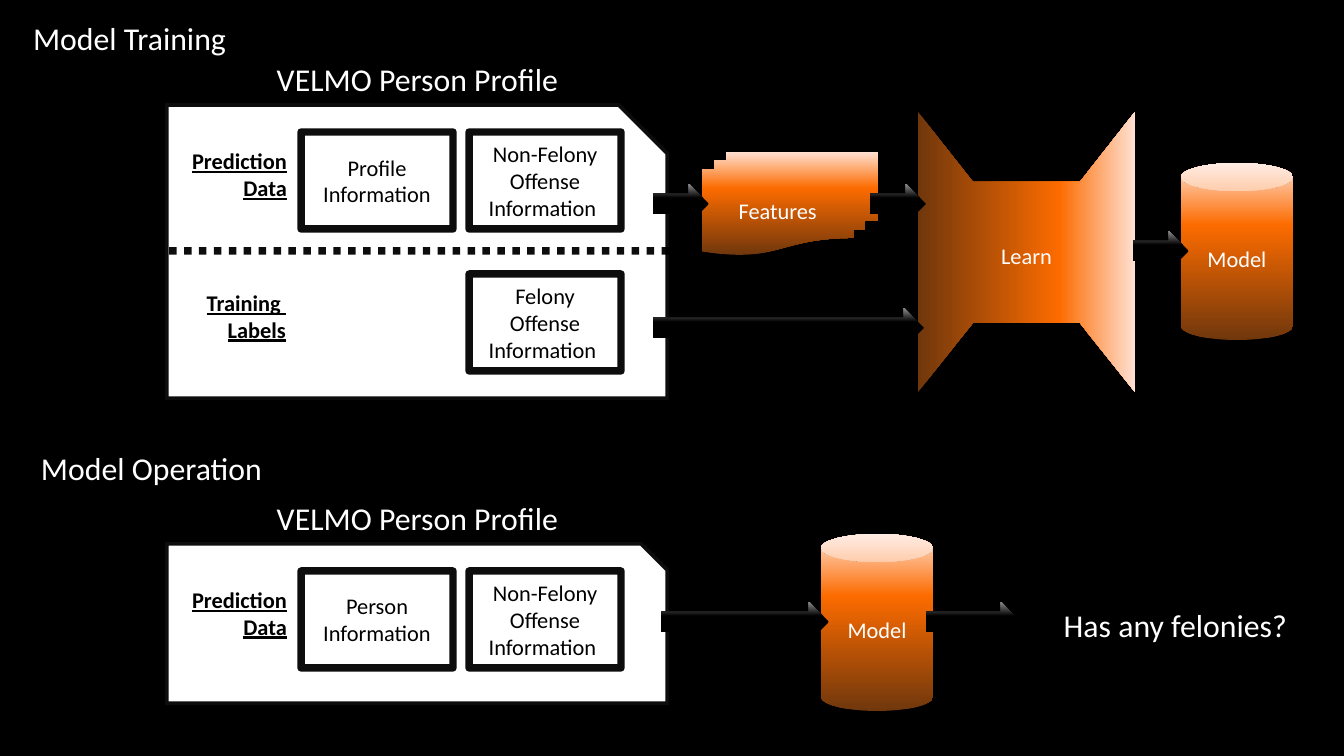
"""Build the slide on training and running the felony model."""
from copy import deepcopy
from lxml import etree
from pptx import Presentation
from pptx.dml.color import RGBColor
from pptx.enum.dml import MSO_LINE
from pptx.enum.shapes import MSO_CONNECTOR, MSO_SHAPE
from pptx.enum.text import MSO_ANCHOR, MSO_AUTO_SIZE, PP_ALIGN
from pptx.oxml.ns import qn
from pptx.util import Pt

PX = 914400 / 134.4
CARD, RECT = MSO_SHAPE.SNIP_1_RECTANGLE, MSO_SHAPE.RECTANGLE
CAN, ARROW = MSO_SHAPE.CAN, MSO_SHAPE.RIGHT_ARROW
PAGES = MSO_SHAPE.FLOWCHART_MULTIDOCUMENT
LEFT, MID, RIGHT = PP_ALIGN.LEFT, PP_ALIGN.CENTER, PP_ALIGN.RIGHT
COLORS = {"black": "000000", "white": "FFFFFF", "gray": "8D8D8D",
          "brown": "70370C", "orange": "FC6B00", "peach": "FFE0D2"}
HEX = {name: RGBColor.from_string(code) for name, code in COLORS.items()}
WARM = ["brown", "orange", "peach"]
DARK = ["black", "black", "gray"]

deck = Presentation()
deck.slide_width, deck.slide_height = round(1344 * PX), round(756 * PX)
slide = deck.slides.add_slide(deck.slide_layouts[6])
slide.background.fill.solid()
slide.background.fill.fore_color.rgb = HEX["black"]
shapes = slide.shapes
edges = []


def write(text, box=None, host=None, size=12, color="white", align=MID,
          bold=None, pad=(13, 7)):
    item = host or shapes.add_textbox(*[round(n * PX) for n in box])
    frame = item.text_frame
    frame.text = text
    if host:
        frame.word_wrap = True
        frame.vertical_anchor = MSO_ANCHOR.MIDDLE
    else:
        frame.word_wrap = False
        frame.auto_size = MSO_AUTO_SIZE.SHAPE_TO_FIT_TEXT
        frame.margin_left = frame.margin_right = round(pad[0] * PX)
        frame.margin_top = frame.margin_bottom = round(pad[1] * PX)
    for para in frame.paragraphs:
        para.alignment = align
        font = para.runs[0].font
        font.name, font.size = "Calibri", Pt(size)
        font.bold = font.underline = bold
        font.color.rgb = HEX[color]


def draw(kind, box, tones=None, angle=90, form=None):
    item = form or shapes.add_shape(kind, *[round(n * PX) for n in box])
    item.shadow.inherit = False
    if not tones:
        item.fill.solid()
        item.fill.fore_color.rgb = HEX["white"]
        edges.append(item)
        return item
    item.line.fill.background()
    item.fill.gradient()
    item.fill.gradient_angle = angle
    stops = item.element.spPr.find(".//" + qn("a:gsLst"))
    stops.insert(1, deepcopy(stops[0]))
    for stop, tone, place in zip(item.fill.gradient_stops, tones, (0, 0.65, 1)):
        stop.color.rgb = HEX[tone]
        stop.position = place
    return item


for text, box in [("Model Training", (24, 15, 215, 48)),
                  ("Model Operation", (32, 445, 243, 48))]:
    write(text, box, size=17, align=LEFT, pad=(9, 4))

for top, high, first in [(103, 297, "Profile"), (542, 163, "Person")]:
    draw(CARD, (165, top, 504, high))
    write("VELMO Person Profile", (256, top - 50, 323, 56), size=17)
    write("Prediction\nData", (163, top + 37, 137, 71),
          color="black", align=RIGHT, bold=True)
    for left, text in [(301, first + "\nInformation"),
                       (469, "Non-Felony Offense\nInformation ")]:
        write(text, host=draw(RECT, (left, top + 29, 152, 97)), color="black")

write("Felony Offense\nInformation ",
      host=draw(RECT, (469, 274, 152, 97)), color="black")
write("Training \nLabels", (183, 282, 116, 71),
      color="black", align=RIGHT, bold=True)

split = shapes.add_connector(MSO_CONNECTOR.STRAIGHT,
                             *[round(n * PX) for n in (669, 251, 165, 251)])
etree.SubElement(split.element.spPr, qn("a:effectLst"))
split.line.dash_style = MSO_LINE.ROUND_DOT
edges.append(split)
for item in edges:
    item.line.width = Pt(4)
    item.line.color.rgb = HEX["black"]
    tint = item.element.spPr.find(qn("a:ln")).find(".//" + qn("a:srgbClr"))
    etree.SubElement(tint, qn("a:alpha"), val="95000")

pen = shapes.build_freeform(1135, 112, scale=PX)
pen.add_line_segments([(1135, 392), (1080, 323), (973, 323), (918, 392),
                       (918, 112), (973, 182), (1080, 182)])
draw(None, None, WARM, angle=0, form=pen.convert_to_shape())
write("Learn", (986, 235, 81, 40))

for kind, box, text in [(PAGES, (702, 152, 176, 103), "Features"),
                        (CAN, (1181, 163, 112, 177), "Model"),
                        (CAN, (821, 534, 112, 177), "Model")]:
    write(text, host=draw(kind, box, WARM))

for left, top, wide in [(653, 184, 56), (870, 184, 56), (653, 308, 271),
                        (1133, 231, 56), (661, 602, 168), (926, 602, 95)]:
    draw(ARROW, (left, top, wide, 40), DARK)

write("Has any felonies?", (1044, 599, 263, 56), size=17)
deck.save("out.pptx")
